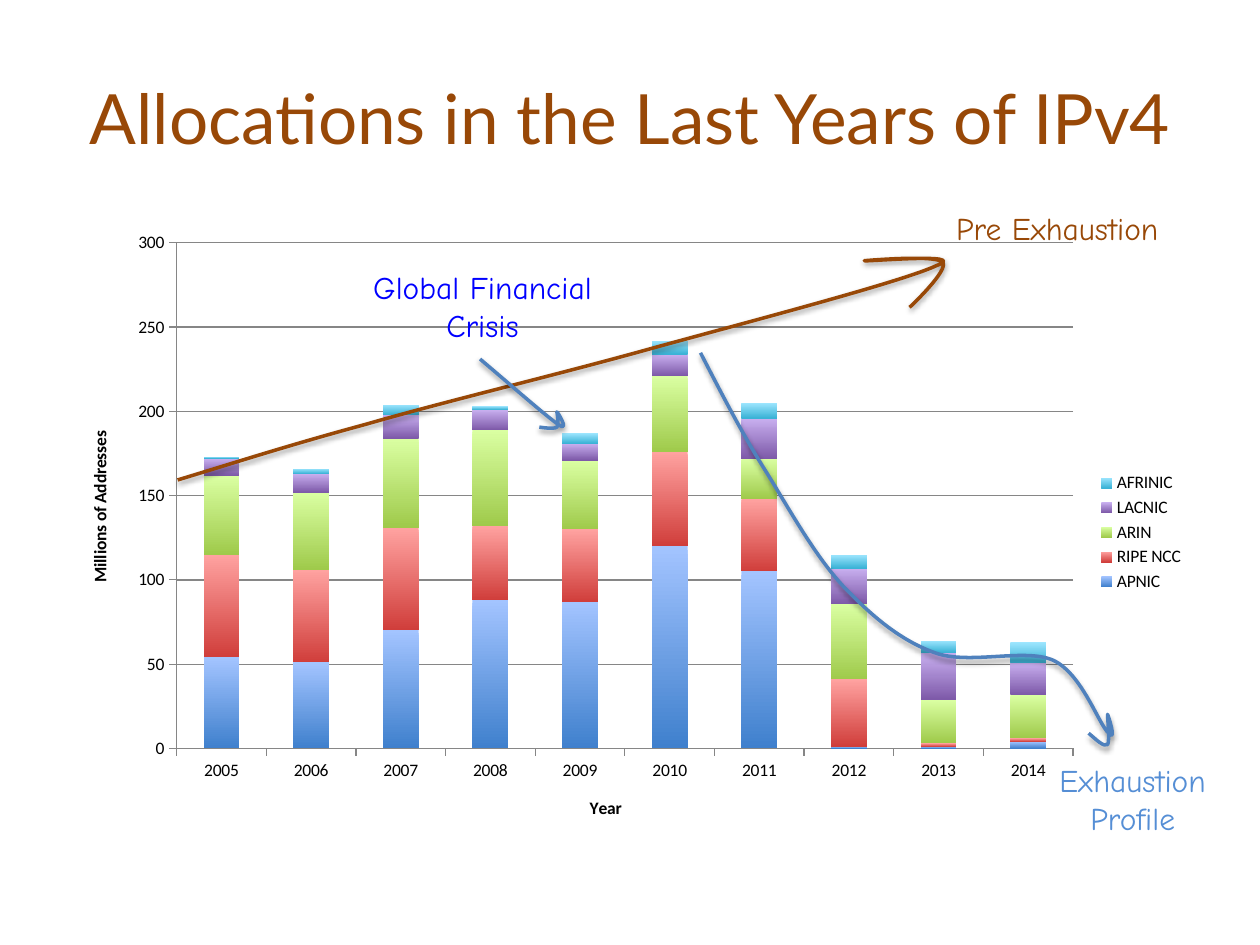
import pptx
import pptx.chart.data
import pptx.dml.color
import pptx.enum.chart
import pptx.enum.text
import pptx.oxml
import pptx.oxml.ns
import pptx.util

Pt = pptx.util.Pt
RGBColor = pptx.dml.color.RGBColor
ALIGN = pptx.enum.text.PP_ALIGN

BLACK = RGBColor(0x00, 0x00, 0x00)
GREY = RGBColor(0x86, 0x86, 0x86)
BROWN = RGBColor(0x98, 0x48, 0x07)
BLUE = RGBColor(0x00, 0x00, 0xFF)
STEEL = RGBColor(0x4F, 0x81, 0xBD)
SKY = RGBColor(0x55, 0x8E, 0xD5)

YEARS = [str(year) for year in range(2005, 2015)]
# registry, allocations per year, gradient top, gradient bottom
REGISTRIES = [
    ("APNIC", (54, 51, 70, 88, 87, 120, 105, 1, 1, 4),
     RGBColor(0xA3, 0xC4, 0xFF), RGBColor(0x3F, 0x80, 0xCD)),
    ("RIPE NCC", (61, 55, 61, 44, 43, 56, 43, 40, 2, 2),
     RGBColor(0xFF, 0xA2, 0xA0), RGBColor(0xD0, 0x3E, 0x3B)),
    ("ARIN", (47, 46, 53, 57, 41, 45, 24, 45, 26, 26),
     RGBColor(0xDA, 0xFF, 0xA2), RGBColor(0x9F, 0xCA, 0x4B)),
    ("LACNIC", (10, 11, 14, 12, 10, 13, 24, 21, 28, 19),
     RGBColor(0xC9, 0xB0, 0xF0), RGBColor(0x7E, 0x5A, 0xA9)),
    ("AFRINIC", (1, 3, 6, 2, 6, 8, 9, 8, 7, 12),
     RGBColor(0x9E, 0xE6, 0xFF), RGBColor(0x3B, 0xB3, 0xD6)),
]

# Each curve is a start point followed by triples of Bezier points.
GROWTH_CURVE = [
    (101.5, 274.3), (132.5, 265), (163.4, 254.9), (208.8, 242.6),
    (253.4, 229.7), (316.8, 214.6), (371.5, 199.4),
    (426.2, 184.3), (514.8, 161.3), (535, 151.9),
    (555.8, 144), (493.2, 149.8), (493.9, 149),
    (494.6, 149), (534.2, 145.4), (538.6, 149.8),
    (542.9, 154.1), (519.8, 175.7), (519.8, 175.7)]
CRISIS_CURVE = [
    (274.3, 205.2), (293, 221), (311.8, 237.6), (319, 242.6),
    (326.2, 247.7), (318.2, 234.7), (318.2, 235.4),
    (318.2, 235.4), (319.7, 242.6), (318.2, 244.1),
    (316.8, 245.5), (308.2, 244.1), (308.2, 244.1)]
EXHAUSTION_CURVE = [
    (400.3, 201.6), (412.6, 225.4), (424.8, 249.1), (438.5, 270.7),
    (452.2, 293), (465.8, 317.5), (481.7, 334.8),
    (497.5, 351.4), (514.1, 365.8), (534.2, 373),
    (553.7, 380.2), (585.4, 370.1), (601.9, 377.3),
    (618.5, 385.2), (627.8, 414), (633.6, 419),
    (638.6, 424.8), (632.9, 407.5), (632.9, 408.2),
    (632.9, 409.7), (634.3, 424.1), (632.9, 425.5),
    (630.7, 427), (626.4, 422.6), (622.1, 419)]

NAMESPACE = pptx.oxml.ns.nsdecls("a")
SHADOW = (
    f'<a:effectLst {NAMESPACE}>'
    '<a:outerShdw blurRad="40000" dist="20000" dir="5400000" rotWithShape="0">'
    '<a:srgbClr val="000000"><a:alpha val="38000"/></a:srgbClr>'
    '</a:outerShdw></a:effectLst>')


def bend_lines(shape, knots):
    """Turn the straight segments of a freeform into Bezier segments."""
    lines = list(shape._element.iter(pptx.oxml.ns.qn("a:lnTo")))
    for index, line in enumerate(lines):
        triple = knots[3 * index + 1:3 * index + 4]
        points = "".join(
            f'<a:pt x="{Pt(x) - shape.left}" y="{Pt(y) - shape.top}"/>' for x, y in triple)
        bezier = pptx.oxml.parse_xml(
            f'<a:cubicBezTo {NAMESPACE}>{points}</a:cubicBezTo>')
        line.getparent().replace(line, bezier)


class SlideBuilder:
    title_font = "Lato"
    note_font = "Comic Neue"
    chart_font = "Calibri"

    def __init__(self, slide):
        self.slide = slide

    def text(self, lines, box, font, size, color, align=ALIGN.CENTER, wrap=False):
        shape = self.slide.shapes.add_textbox(*map(Pt, box))
        frame = shape.text_frame
        frame.word_wrap = wrap
        if wrap:
            frame.vertical_anchor = pptx.enum.text.MSO_ANCHOR.MIDDLE
        else:
            frame.auto_size = pptx.enum.text.MSO_AUTO_SIZE.SHAPE_TO_FIT_TEXT
        frame.text = "\n".join(lines)
        for paragraph in frame.paragraphs:
            paragraph.alignment = align
            paragraph.font.name = font
            paragraph.font.size = Pt(size)
            paragraph.font.color.rgb = color

    def note(self, lines, box, color, align=ALIGN.CENTER):
        self.text(lines, box, self.note_font, 18, color, align)

    def curve(self, knots, color):
        builder = self.slide.shapes.build_freeform(*map(Pt, knots[0]))
        builder.add_line_segments([(Pt(x), Pt(y)) for x, y in knots[3::3]], close=False)
        shape = builder.convert_to_shape()
        bend_lines(shape, knots)
        shape.fill.background()
        shape.line.color.rgb = color
        shape.line.width = Pt(2)
        shape._element.spPr.append(pptx.oxml.parse_xml(SHADOW))

    def axis(self, axis, title):
        axis.major_tick_mark = pptx.enum.chart.XL_TICK_MARK.OUTSIDE
        axis.format.line.color.rgb = GREY
        axis.format.line.width = Pt(0.75)
        frame = axis.axis_title.text_frame
        frame.text = title
        font = frame.paragraphs[0].font
        font.name = self.chart_font
        font.size = Pt(10)
        font.bold = True
        font.color.rgb = BLACK

    def stacked_chart(self, box):
        data = pptx.chart.data.CategoryChartData()
        data.categories = YEARS
        for name, values, _, _ in REGISTRIES:
            data.add_series(name, values)
        chart = self.slide.shapes.add_chart(
            pptx.enum.chart.XL_CHART_TYPE.COLUMN_STACKED, *map(Pt, box), data).chart
        chart.has_title = False
        chart.font.name = self.chart_font
        chart.font.size = Pt(10)
        chart.font.color.rgb = BLACK
        chart.has_legend = True
        chart.legend.position = pptx.enum.chart.XL_LEGEND_POSITION.RIGHT
        chart.legend.include_in_layout = False

        self.axis(chart.category_axis, "Year")
        value_axis = chart.value_axis
        self.axis(value_axis, "Millions of Addresses")
        value_axis.minimum_scale = 0
        value_axis.maximum_scale = 300
        value_axis.major_unit = 50
        value_axis.has_major_gridlines = True
        value_axis.major_gridlines.format.line.color.rgb = GREY
        value_axis.major_gridlines.format.line.width = Pt(0.75)

        plot = chart.plots[0]
        plot.gap_width = 150
        plot.overlap = 100
        plot.vary_by_categories = False
        for series, (_, _, top, bottom) in zip(plot.series, REGISTRIES):
            fill = series.format.fill
            fill.gradient()
            fill.gradient_angle = 270
            for stop, color in zip(fill.gradient_stops, (top, bottom)):
                stop.color.rgb = color


def main():
    presentation = pptx.Presentation()
    presentation.slide_width = Pt(720)
    presentation.slide_height = Pt(540)
    builder = SlideBuilder(presentation.slides.add_slide(presentation.slide_layouts[6]))

    builder.text(["Allocations in the Last Years of IPv4"], (36, 21.6, 648, 90),
                 builder.title_font, 39.6, BROWN, wrap=True)
    builder.stacked_chart((36, 126, 648, 356.4))
    builder.curve(GROWTH_CURVE, BROWN)
    builder.note(["Pre Exhaustion"], (539.3, 115.9, 162.7, 29.1), BROWN, ALIGN.LEFT)
    builder.note(["Global Financial", "Crisis"], (195.1, 149.8, 161.3, 50.9), BLUE)
    builder.curve(CRISIS_CURVE, STEEL)
    builder.curve(EXHAUSTION_CURVE, STEEL)
    builder.note(["Exhaustion", "Profile"], (587.5, 431.3, 119.5, 50.9), SKY)
    presentation.save("out.pptx")


if __name__ == "__main__":
    main()
